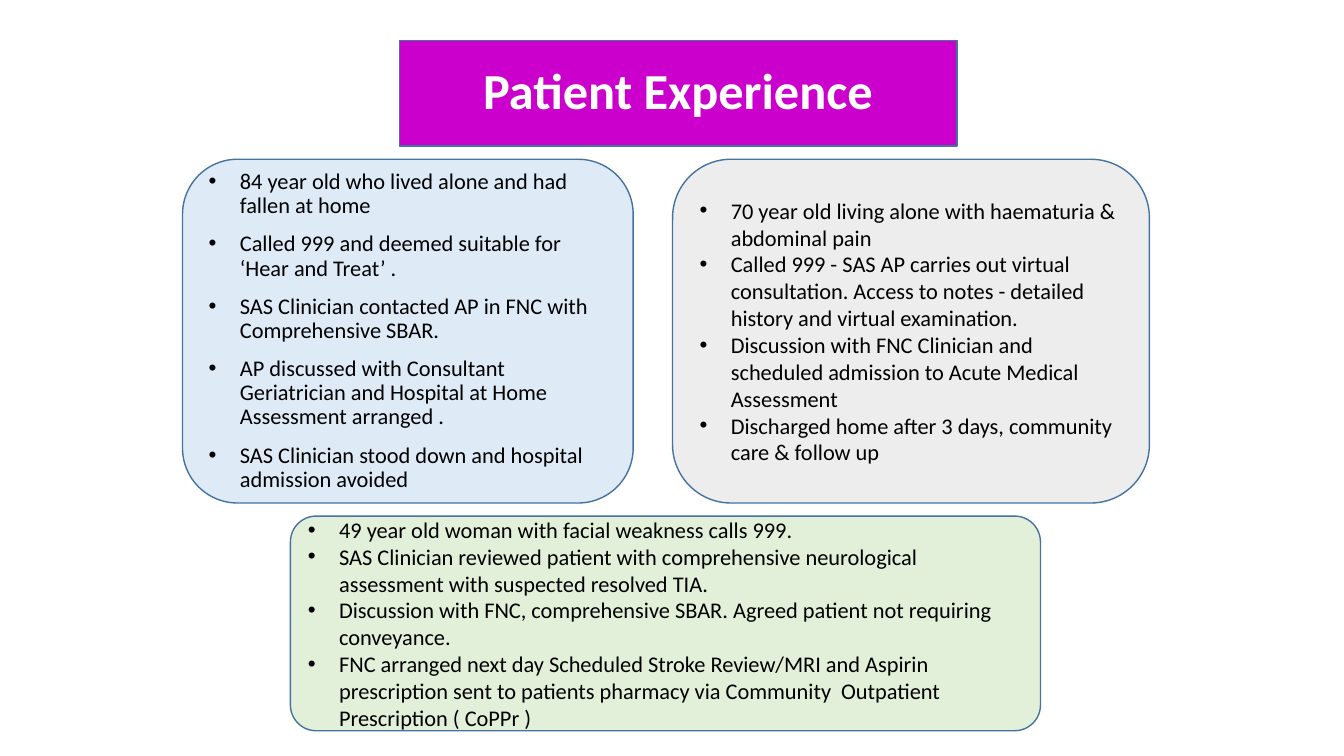
import dataclasses

import lxml.etree
import pptx
import pptx.dml.color
import pptx.enum.shapes
import pptx.enum.text
import pptx.oxml.ns
import pptx.util


@dataclasses.dataclass(frozen=True)
class Theme:
    font: str = "Calibri"
    title_size: int = 36
    body_size: int = 16
    outline_width: int = 1
    indent: float = 0.31
    title_fill: str = "CC00CC"
    title_text: str = "FFFFFF"
    body_text: str = "000000"
    outline: str = "43739E"
    blue: str = "DEEBF7"
    grey: str = "EDEDED"
    green: str = "E2F0D9"


THEME = Theme()
SLIDE_WIDTH = pptx.util.Inches(13.33)
SLIDE_HEIGHT = pptx.util.Inches(7.5)

# Boxes: left, top, width, height in percent of the slide
CASES_TOP, CASES_HEIGHT = 21.07, 45.47
TITLE_BOX = (29.71, 5.33, 41.49, 14)
FALL_BOX = (13.58, CASES_TOP, 33.53, CASES_HEIGHT)
ABDOMINAL_BOX = (50.04, CASES_TOP, 35.48, CASES_HEIGHT)
STROKE_BOX = (21.61, 68.27, 55.81, 28.4)

FALL_CASE = [
    "84 year old who lived alone and had fallen at home",
    "Called 999 and deemed suitable for ‘Hear and Treat’ .",
    "SAS Clinician contacted AP in FNC with Comprehensive SBAR.",
    "AP discussed with Consultant Geriatrician and Hospital at Home Assessment arranged .",
    "SAS Clinician stood down and hospital admission avoided",
]
ABDOMINAL_CASE = [
    "70 year old living alone with haematuria & abdominal pain",
    "Called 999 - SAS AP carries out virtual consultation. Access to notes - "
    "detailed history and virtual examination.",
    "Discussion with FNC Clinician and scheduled admission to Acute Medical Assessment",
    "Discharged home after 3 days, community care & follow up",
]
STROKE_CASE = [
    "49 year old woman with facial weakness calls 999.",
    "SAS Clinician reviewed patient with comprehensive neurological assessment "
    "with suspected resolved TIA.",
    "Discussion with FNC, comprehensive SBAR. Agreed patient not requiring conveyance.",
    "FNC arranged next day Scheduled Stroke Review/MRI and Aspirin prescription sent to "
    "patients pharmacy via Community  Outpatient Prescription ( CoPPr )",
]


def color(value):
    return pptx.dml.color.RGBColor.from_string(value)


def to_lengths(box):
    """Turn percentages of the slide into lengths."""
    sizes = (SLIDE_WIDTH, SLIDE_HEIGHT) * 2
    return [int(size * share / 100) for size, share in zip(sizes, box)]


def place(placeholder, box):
    (placeholder.left, placeholder.top,
     placeholder.width, placeholder.height) = to_lengths(box)


def round_corners(placeholder, radius):
    """Give a placeholder a rounded outline."""
    geometry = lxml.etree.SubElement(
        placeholder.element.spPr, pptx.oxml.ns.qn("a:prstGeom"), prst="roundRect")
    adjustments = lxml.etree.SubElement(geometry, pptx.oxml.ns.qn("a:avLst"))
    lxml.etree.SubElement(adjustments, pptx.oxml.ns.qn("a:gd"),
                          name="adj", fmla=f"val {round(radius * 100000)}")


def style_panel(shape, fill):
    """Set what the title and all case panels share."""
    shape.fill.solid()
    shape.fill.fore_color.rgb = color(fill)
    shape.line.color.rgb = color(THEME.outline)
    shape.line.width = pptx.util.Pt(THEME.outline_width)
    frame = shape.text_frame
    frame.word_wrap = True
    frame.auto_size = pptx.enum.text.MSO_AUTO_SIZE.NONE
    frame.vertical_anchor = pptx.enum.text.MSO_ANCHOR.MIDDLE


def style_font(paragraph, size, text_color, bold=False):
    paragraph.font.name = THEME.font
    paragraph.font.size = pptx.util.Pt(size)
    paragraph.font.color.rgb = color(text_color)
    paragraph.font.bold = bold


def add_bullet(paragraph):
    indent = pptx.util.Inches(THEME.indent)
    properties = paragraph._p.get_or_add_pPr()
    properties.set("marL", str(indent))
    properties.set("indent", str(-indent))
    lxml.etree.SubElement(properties, pptx.oxml.ns.qn("a:buFont"), typeface="Arial")
    lxml.etree.SubElement(properties, pptx.oxml.ns.qn("a:buChar"), char="•")


def write_bullets(frame, items, line_spacing=1.0, gap=0):
    frame.text = "\n".join(items)
    for index, paragraph in enumerate(frame.paragraphs):
        add_bullet(paragraph)
        paragraph.alignment = pptx.enum.text.PP_ALIGN.LEFT
        paragraph.line_spacing = line_spacing
        paragraph.space_before = pptx.util.Pt(gap if index else 0)
        style_font(paragraph, THEME.body_size, THEME.body_text)


def fill_title(title, box):
    place(title, box)
    style_panel(title, THEME.title_fill)
    title.text_frame.text = "Patient Experience"
    paragraph = title.text_frame.paragraphs[0]
    paragraph.alignment = pptx.enum.text.PP_ALIGN.CENTER
    paragraph.line_spacing = 0.9
    style_font(paragraph, THEME.title_size, THEME.title_text, bold=True)


def fill_body_case(body, box, items):
    place(body, box)
    round_corners(body, 0.16)
    style_panel(body, THEME.blue)
    write_bullets(body.text_frame, items, line_spacing=0.9, gap=10)


def add_case(slide, box, items, fill, radius):
    panel = slide.shapes.add_shape(
        pptx.enum.shapes.MSO_SHAPE.ROUNDED_RECTANGLE, *to_lengths(box))
    panel.shadow.inherit = False
    panel.adjustments[0] = radius
    style_panel(panel, fill)
    write_bullets(panel.text_frame, items)


def main():
    presentation = pptx.Presentation()
    presentation.slide_width = SLIDE_WIDTH
    presentation.slide_height = SLIDE_HEIGHT
    slide = presentation.slides.add_slide(presentation.slide_layouts[1])

    # Heading
    fill_title(slide.shapes.title, TITLE_BOX)

    # Patient cases
    fill_body_case(slide.placeholders[1], FALL_BOX, FALL_CASE)
    add_case(slide, ABDOMINAL_BOX, ABDOMINAL_CASE, THEME.grey, 0.17)
    add_case(slide, STROKE_BOX, STROKE_CASE, THEME.green, 0.12)

    presentation.save("out.pptx")


if __name__ == "__main__":
    main()
